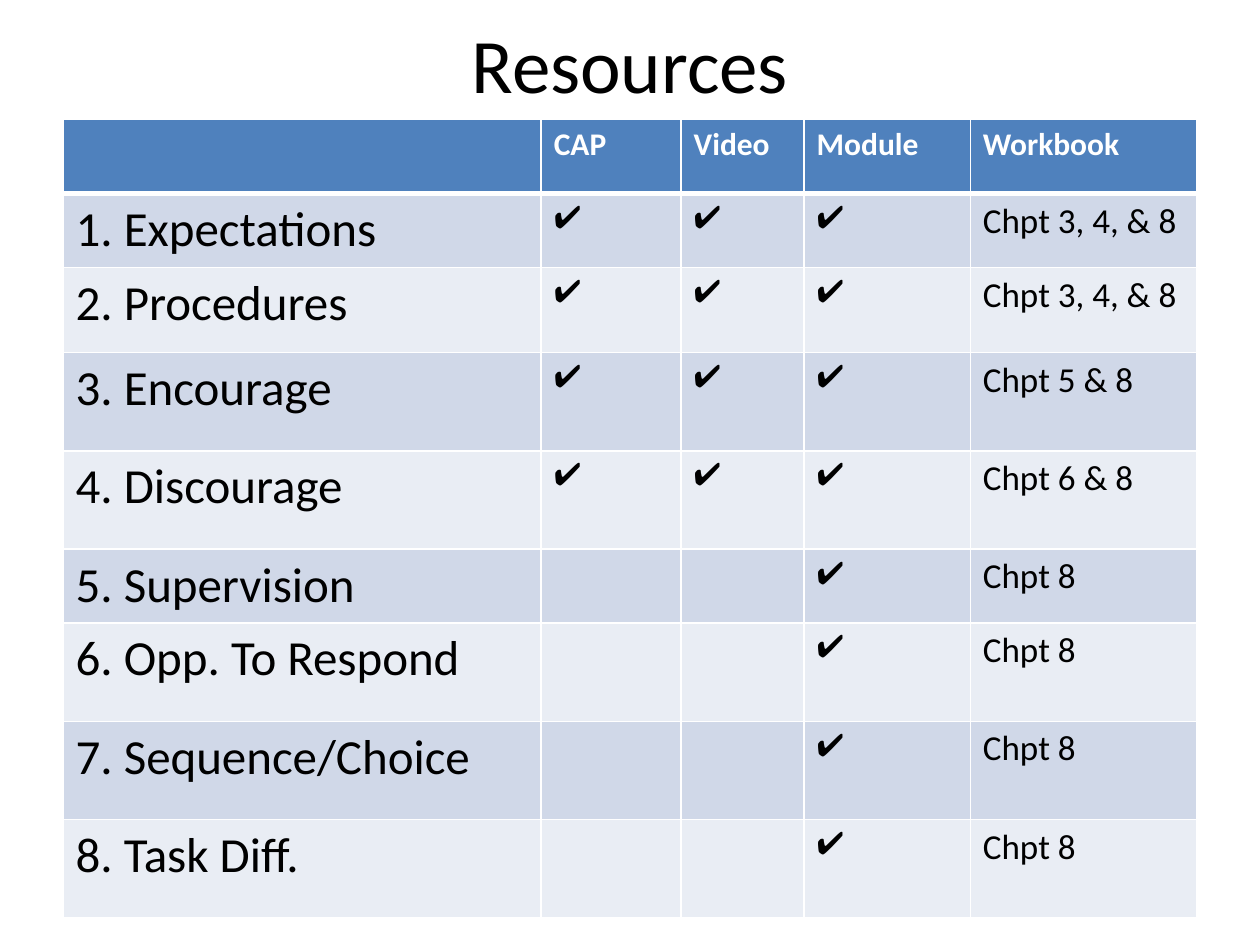
from lxml import etree
from pptx import Presentation
from pptx import util as u
from pptx.dml.color import RGBColor
from pptx.enum import text
from pptx.oxml import ns

COLORS = {
    "header": "4F81BD",
    "odd_row": "D0D8E8",
    "even_row": "E9EDF4",
    "white": "FFFFFF",
    "black": "000000",
}
CHECK = "✔"
HEADINGS = ["", "CAP", "Video", "Module", "Workbook"]
# Topic, whether CAP and Video cover it, workbook chapters
RESOURCES = [
    ("1. Expectations", True, "Chpt 3, 4, & 8"),
    ("2. Procedures", True, "Chpt 3, 4, & 8"),
    ("3. Encourage", True, "Chpt 5 & 8"),
    ("4. Discourage", True, "Chpt 6 & 8"),
    ("5. Supervision", False, "Chpt 8"),
    ("6. Opp. To Respond", False, "Chpt 8"),
    ("7. Sequence/Choice", False, "Chpt 8"),
    ("8. Task Diff.", False, "Chpt 8"),
]
COLUMN_WIDTHS = [9.64, 2.82, 2.48, 3.35, 4.57]
SHORT, MEDIUM, TALL = 1.49, 1.72, 1.98
ROW_HEIGHTS = [SHORT, SHORT, MEDIUM, TALL, TALL, SHORT, TALL, TALL, TALL]


def write(frame, content, size, font="Calibri", color="black", bold=False,
          align=text.PP_ALIGN.LEFT):
    paragraph = frame.paragraphs[0]
    paragraph.alignment = align
    run = paragraph.add_run()
    run.text = content
    run.font.size = u.Pt(size)
    run.font.name = font
    run.font.bold = bold
    run.font.color.rgb = RGBColor.from_string(COLORS[color])


def add_border(cell, side, points):
    """Draw a white line on one side (L, R, T or B); call before filling."""
    properties = cell._tc.get_or_add_tcPr()
    line = etree.SubElement(properties, ns.qn(f"a:ln{side}"), w=str(u.Pt(points)))
    fill = etree.SubElement(line, ns.qn("a:solidFill"))
    etree.SubElement(fill, ns.qn("a:srgbClr"), val=COLORS["white"])


def style_cell(cell, row, fill):
    widths = {"L": 1, "R": 1, "T": 3 if row == 1 else 1, "B": 3 if row == 0 else 1}
    for side, points in widths.items():
        add_border(cell, side, points)
    cell.fill.solid()
    cell.fill.fore_color.rgb = RGBColor.from_string(COLORS[fill])


def add_title(slide, left, top, width, height):
    box = slide.shapes.add_textbox(u.Cm(left), u.Cm(top), u.Cm(width), u.Cm(height))
    frame = box.text_frame
    frame.word_wrap = True
    frame.vertical_anchor = text.MSO_ANCHOR.MIDDLE
    write(frame, "Resources", 44, align=text.PP_ALIGN.CENTER)


def add_resource_table(slide, left, top, width, height):
    table = slide.shapes.add_table(
        len(ROW_HEIGHTS), len(COLUMN_WIDTHS),
        u.Cm(left), u.Cm(top), u.Cm(width), u.Cm(height)).table
    for column, column_width in zip(table.columns, COLUMN_WIDTHS):
        column.width = u.Cm(column_width)
    for row, row_height in zip(table.rows, ROW_HEIGHTS):
        row.height = u.Cm(row_height)

    for index, heading in enumerate(HEADINGS):
        cell = table.cell(0, index)
        style_cell(cell, 0, "header")
        if heading:
            write(cell.text_frame, heading, 18, color="white", bold=True)

    body_formats = [{"size": 28}, *[{"size": 18, "font": "Arial"}] * 3, {"size": 20}]
    for row, (topic, has_media, chapters) in enumerate(RESOURCES, start=1):
        media = CHECK if has_media else ""
        values = [topic, media, media, CHECK, chapters]
        for index, (value, text_format) in enumerate(zip(values, body_formats)):
            cell = table.cell(row, index)
            style_cell(cell, row, "odd_row" if row % 2 else "even_row")
            if value:
                write(cell.text_frame, value, **text_format)


def main():
    presentation = Presentation()
    presentation.slide_width = u.Cm(25.4)
    presentation.slide_height = u.Cm(19.05)
    slide = presentation.slides.add_slide(presentation.slide_layouts[6])
    add_title(slide, 1.27, 0, 22.86, 2.51)
    add_resource_table(slide, 1.27, 2.41, sum(COLUMN_WIDTHS), sum(ROW_HEIGHTS))
    presentation.save("out.pptx")


if __name__ == "__main__":
    main()
